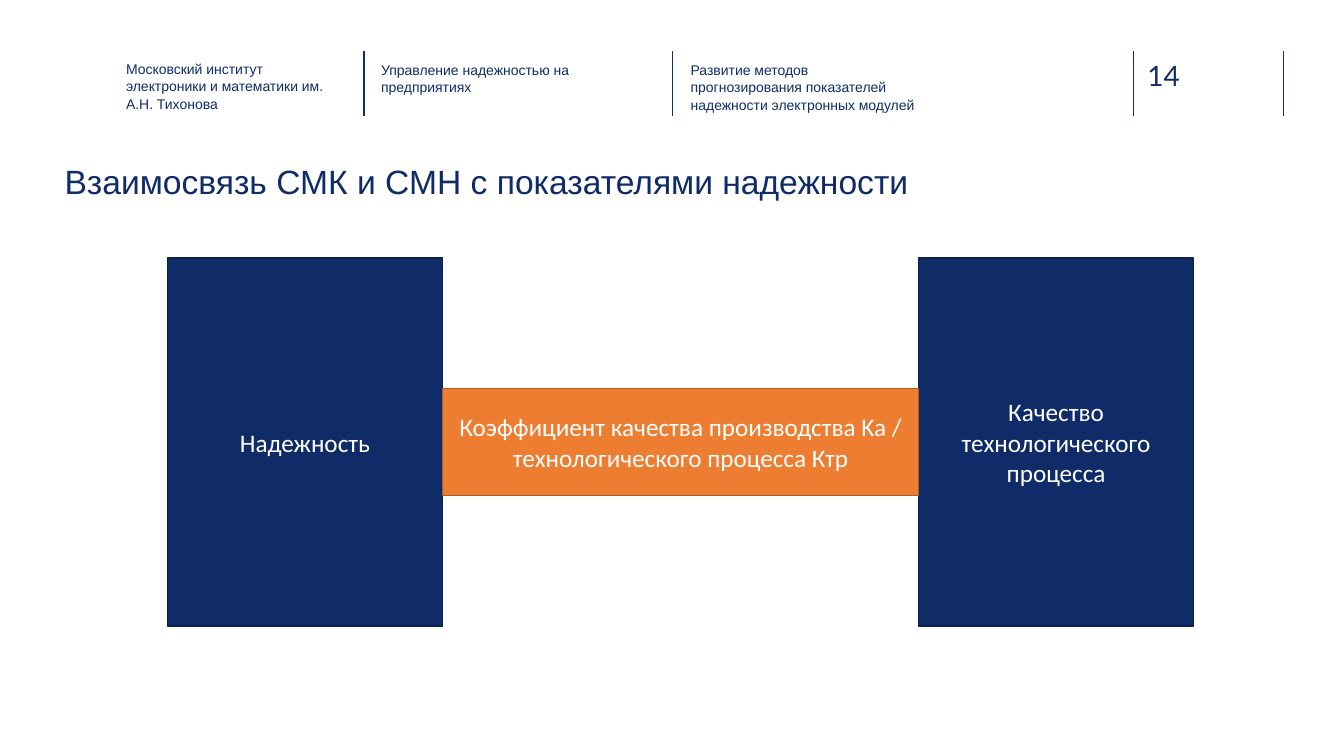
from dataclasses import dataclass

from pptx import Presentation
from pptx.dml.color import RGBColor as RGB
from pptx.enum.shapes import MSO_CONNECTOR as Link, MSO_SHAPE as Kind
from pptx.enum.text import MSO_ANCHOR as Anchor, MSO_AUTO_SIZE as Fit, PP_ALIGN as Align
from pptx.oxml.ns import qn
from pptx.util import Inches, Pt


@dataclass(frozen=True)
class Theme:
    navy: str = "0F2C68"
    ink: str = "0E2D69"
    rule: str = "102D69"
    edge: str = "0B214D"
    orange: str = "ED7D31"
    rust: str = "AF5C24"
    white: str = "FFFFFF"
    sans: str = "Arial"
    block: str = "Calibri"
    digit: str = "Lato"
    title: int = 24
    page: int = 20
    label: int = 18
    head: int = 10


def write(shape, text, font, size, color, align=Align.LEFT, anchor=Anchor.TOP,
          pad=0, gap=1.0):
    frame = shape.text_frame
    frame.word_wrap = True
    frame.auto_size = Fit.NONE
    frame.vertical_anchor = anchor
    frame.margin_left = frame.margin_right = Inches(pad)
    frame.margin_top = frame.margin_bottom = Inches(pad / 2)
    frame.text = text
    para = frame.paragraphs[0]
    para.alignment = align
    para.line_spacing = gap
    para.space_before = Pt(0)
    props = para._p.get_or_add_pPr()
    props.set("marL", "0")
    props.set("indent", "0")
    props.append(props.makeelement(qn("a:buNone"), {}))
    face = para.runs[0].font
    face.name, face.size, face.bold = font, Pt(size), False
    face.color.rgb = RGB.from_string(color)


class Deck:
    """Holds the theme and the slide being built."""

    def __init__(self, theme):
        self.theme = theme
        self.file = Presentation()
        self.file.slide_width, self.file.slide_height = Inches(13.33), Inches(7.5)
        layout = self.file.slide_layouts.get_by_name("Comparison")
        self.slide = self.file.slides.add_slide(layout)
        self.slots = [s for s in self.slide.placeholders if s != self.slide.shapes.title]

    def place(self, shape, box):
        shape.left, shape.top, shape.width, shape.height = map(Inches, box)

    def title(self, text, box):
        shape = self.slide.shapes.title
        self.place(shape, box)
        t = self.theme
        write(shape, text, t.sans, t.title, t.navy, anchor=Anchor.MIDDLE)

    def head(self, text, box, color):
        """Fill the next free body placeholder with a header note."""
        shape = self.slots.pop(0)
        self.place(shape, box)
        write(shape, text, self.theme.sans, self.theme.head, color, gap=1.05)

    def page(self, text, box):
        shape = self.slide.shapes.add_textbox(*map(Inches, box))
        write(shape, text, self.theme.digit, self.theme.page, self.theme.rule)

    def rule(self, x, top, end):
        line = self.slide.shapes.add_connector(
            Link.STRAIGHT, Inches(x), Inches(top), Inches(x), Inches(end))
        line.line.color.rgb = RGB.from_string(self.theme.rule)
        line.line.width = Pt(1)
        props = line._element.spPr
        props.append(props.makeelement(qn("a:effectLst"), {}))

    def block(self, text, box, fill, edge):
        shape = self.slide.shapes.add_shape(Kind.RECTANGLE, *map(Inches, box))
        shape.shadow.inherit = False
        shape.fill.solid()
        shape.fill.fore_color.rgb = RGB.from_string(fill)
        shape.line.color.rgb = RGB.from_string(edge)
        shape.line.width = Pt(1)
        t = self.theme
        write(shape, text, t.block, t.label, t.white, Align.CENTER, Anchor.MIDDLE, pad=0.1)

    def save(self):
        for slot in self.slots:
            slot._element.getparent().remove(slot._element)
        self.file.save("out.pptx")


def main():
    theme = Theme()
    deck = Deck(theme)

    for x in (3.61, 6.67, 11.24, 12.73):
        deck.rule(x, 0.51, 1.15)
    deck.page("14", (11.38, 0.58, 0.73, 0.34))

    deck.title("Взаимосвязь СМК и СМН с показателями надежности", (0.64, 1.58, 9.61, 0.44))
    heads = (
        ("Московский институт электроники и математики им. А.Н. Тихонова",
         (1.25, 0.59, 2.08, 0.45), theme.navy),
        ("Управление надежностью на предприятиях",
         (3.78, 0.6, 2.26, 0.45), theme.ink),
        ("Развитие методов прогнозирования показателей надежности электронных модулей",
         (6.85, 0.6, 2.26, 0.45), theme.ink),
    )
    for text, box, color in heads:
        deck.head(text, box, color)

    left, top, wide, tall = 1.66, 2.56, 2.73, 3.65
    span, bar = 4.72, 1.06
    inner = left + wide
    for text, x in (("Надежность", left),
                    ("Качество технологического процесса", inner + span)):
        deck.block(text, (x, top, wide, tall), theme.navy, theme.edge)
    deck.block("Коэффициент качества производства Ka / технологического процесса Ктр",
               (inner, top + (tall - bar) / 2, span, bar), theme.orange, theme.rust)
    deck.save()


if __name__ == "__main__":
    main()
